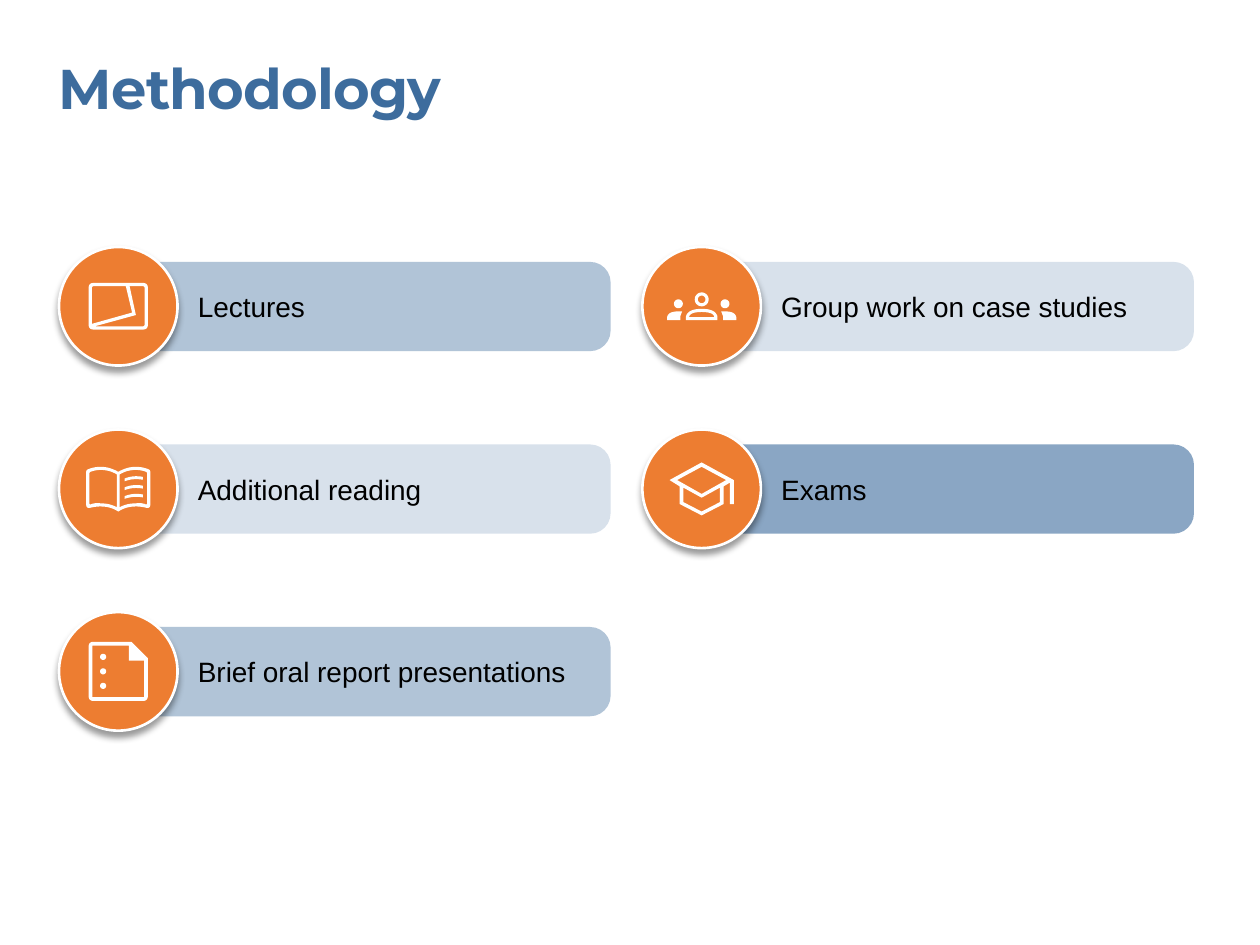
from lxml.etree import SubElement
from pptx import Presentation
from pptx.dml.color import RGBColor
from pptx.enum.shapes import MSO_SHAPE
from pptx.enum.text import MSO_AUTO_SIZE
from pptx.oxml.ns import qn
from pptx.util import Cm, Pt

BLUE, ORANGE, WHITE, BLACK = "3D6C9D", "ED7D31", "FFFFFF", "000000"
BADGE = 2.39
UNIT = 0.0254  # icon grid step in cm
HEAD = {"name": "Montserrat", "size": Pt(32), "bold": True}
BODY = {"name": "Arial", "size": Pt(16), "bold": False}


def color(code):
    return RGBColor.from_string(code)


def paint(shape, code):
    shape.shadow.inherit = False
    shape.fill.solid()
    shape.fill.fore_color.rgb = color(code)
    shape.line.fill.background()


def fade(shape, share):
    tint = shape._element.spPr.find(qn("a:solidFill"))[0]
    SubElement(tint, qn("a:alpha"), val=str(share * 1000))


def cast(shape):
    """Soft shadow straight below the shape."""
    effect = shape._element.spPr.find(qn("a:effectLst"))
    outer = SubElement(effect, qn("a:outerShdw"), blurRad=str(Pt(4)),
                       dist=str(Pt(3)), dir="5400000", rotWithShape="0")
    tint = SubElement(outer, qn("a:srgbClr"), val=BLACK)
    SubElement(tint, qn("a:alpha"), val="40000")


def write(slide, box, text, style, code):
    label = slide.shapes.add_textbox(*map(Cm, box))
    frame = label.text_frame
    frame.word_wrap = True
    frame.auto_size = MSO_AUTO_SIZE.SHAPE_TO_FIT_TEXT
    for side in ("left", "top", "right", "bottom"):
        setattr(frame, f"margin_{side}", 0)
    run = frame.paragraphs[0].add_run()
    run.text = text
    for name, value in style.items():
        setattr(run.font, name, value)
    run.font.color.rgb = color(code)
    return run


# Icon outlines, in grid steps from the badge centre
def trace(*marks):
    """Points of an outline; a mark of four numbers is a quadratic curve."""
    points = []
    for mark in marks:
        if len(mark) == 2:
            points.append(mark)
            continue
        (ax, ay), (bx, by, cx, cy) = points[-1], mark
        for t in (i / 8 for i in range(1, 9)):
            a, b, c = (1 - t) ** 2, 2 * t * (1 - t), t * t
            points.append((a * ax + b * bx + c * cx, a * ay + b * by + c * cy))
    return points


def flip(points):
    return [(-x, y) for x, y in reversed(points)]


def dot(x, y, r):
    k = 0.41 * r
    d = 0.71 * r
    return trace((x + r, y), (x + r, y + k, x + d, y + d), (x + k, y + r, x, y + r),
                 (x - k, y + r, x - d, y + d), (x - r, y + k, x - r, y),
                 (x - r, y - k, x - d, y - d), (x - k, y - r, x, y - r),
                 (x + k, y - r, x + d, y - d), (x + r, y - k, x + r, y))


def board():
    half = trace((0, 18.5), (-19.5, 18.5), (-23.5, 18.5, -23.5, 14.5),
                 (-23.5, -14.5), (-23.5, -18.5, -19.5, -18.5), (0, -18.5))
    page = trace((-21, 14), (11, 5), (6, -16), (-19, -16), (-21, -16, -21, -14))
    edge = trace((-19, 16), (19, 16), (21, 16, 21, 14), (21, -14),
                 (21, -16, 19, -16), (9, -16), (14, 7))
    return [half + flip(half), page, edge]


def group():
    side = trace((-27.5, 11), (-27.5, 9), (-27, 4, -18.5, 4), (-15.5, 4),
                 (-17, 8), (-17, 11))
    body = trace((-12.5, 11), (-12.5, 8), (-11, 2, 0, 2), (11, 2, 12.5, 8),
                 (12.5, 11))
    gap = trace((-10, 8.5), (-9.5, 4.5, 0, 4.5), (9.5, 4.5, 10, 8.5))
    heads = [dot(-18.5, -2, 3.5), dot(18.5, -2, 3.5)]
    return [side, flip(side), body, gap, *heads, dot(0, -5.5, 5.5), dot(0, -5.5, 3)]


def book():
    half = trace((0, 18), (-6, 14, -14, 14), (-18, 14, -22, 15),
                 (-25.5, 16, -25.5, 12), (-25.5, -13), (-25.5, -15, -24, -15.5),
                 (-19, -17.5, -14, -17.5), (-7, -17.5, 0, -13.5))
    page = trace((-14, 11.5), (-7, 11.5, -1.2, 14.5), (-1.2, -11.5),
                 (-7, -15, -14, -15), (-18, -15, -22, -13.5), (-23, -13, -23, -12),
                 (-23, 11), (-23, 13, -21, 12), (-18, 11, -14, 11.5))
    lines = [trace((5, y), (5, y - 2.2), (12, y - 5, 19.5, y - 3.5),
                   (19.5, y - 1.2), (12, y - 2.6, 5, y)) for y in (-6, 1, 8)]
    return [half + flip(half), page, flip(page), *lines]


def cap():
    rim = trace((0, 21), (-17.5, 12), (-17.5, -2), (-25.5, -7), (0, -21),
                (25.5, -7), (25.5, 12), (22.5, 12), (22.5, -5), (17.5, -2),
                (17.5, 12))
    top = trace((0, 4), (19.5, -7), (0, -17.5), (-19.5, -7))
    base = trace((0, 18), (14.5, 10.5), (14.5, -1), (0, 7), (-14.5, -1),
                 (-14.5, 10.5))
    return [rim, top, base]


def report():
    sheet = trace((10.5, -23.5), (23.5, -10.5), (23.5, 19.5),
                  (23.5, 23.5, 19.5, 23.5), (-19.5, 23.5),
                  (-23.5, 23.5, -23.5, 19.5), (-23.5, -19.5),
                  (-23.5, -23.5, -19.5, -23.5))
    inner = trace((-20.5, -20.5), (8.5, -20.5), (8.5, -8.5), (20.5, -8.5),
                  (20.5, 20.5), (-20.5, 20.5))
    return [sheet, inner, *(dot(-12, y, 2.4) for y in (-11.5, 0, 11.5))]


def icon(slide, x, y, rings):
    """One white shape made of closed rings around the centre x, y."""
    pen = None
    for ring in rings:
        first, *rest = [(Cm(x + px * UNIT), Cm(y + py * UNIT)) for px, py in ring]
        if pen is None:
            pen = slide.shapes.build_freeform(*first, scale=1.0)
        else:
            pen.move_to(*first)
        pen.add_line_segments(rest, close=True)
    paint(pen.convert_to_shape(), WHITE)


def title(slide, box):
    run = write(slide, box, "Methodology", HEAD, BLUE)
    run._r.get_or_add_rPr().set("spc", "-50")


def card(slide, x, y, text, share, rings):
    # Bar
    bar = slide.shapes.add_shape(MSO_SHAPE.ROUNDED_RECTANGLE, Cm(x + 1.19),
                                 Cm(y + 0.3), Cm(9.93), Cm(1.8))
    bar.adjustments[0] = 0.23
    paint(bar, BLUE)
    fade(bar, share)
    # Label
    write(slide, (x + 2.8, y + 0.86, 7.65, 0.69), text, BODY, BLACK)
    # Badge with icon
    disc = slide.shapes.add_shape(MSO_SHAPE.OVAL, *map(Cm, (x, y, BADGE, BADGE)))
    paint(disc, ORANGE)
    disc.line.color.rgb = color(WHITE)
    disc.line.width = Pt(1.5)
    cast(disc)
    icon(slide, x + BADGE / 2, y + BADGE / 2, rings)


def main():
    deck = Presentation()
    deck.slide_width, deck.slide_height = Cm(25.4), Cm(19.05)
    slide = deck.slides.add_slide(deck.slide_layouts[6])
    title(slide, (1.19, 1.07, 21.72, 1.37))
    # Cards: column, row, label, opacity, icon
    cards = [
        (0, 0, "Lectures", 40, board()),
        (0, 1, "Additional reading", 20, book()),
        (0, 2, "Brief oral report presentations", 40, report()),
        (1, 0, "Group work on case studies", 20, group()),
        (1, 1, "Exams", 60, cap()),
    ]
    for col, row, *parts in cards:
        card(slide, 1.19 + 11.76 * col, 4.98 + 3.68 * row, *parts)
    deck.save("out.pptx")


if __name__ == "__main__":
    main()
